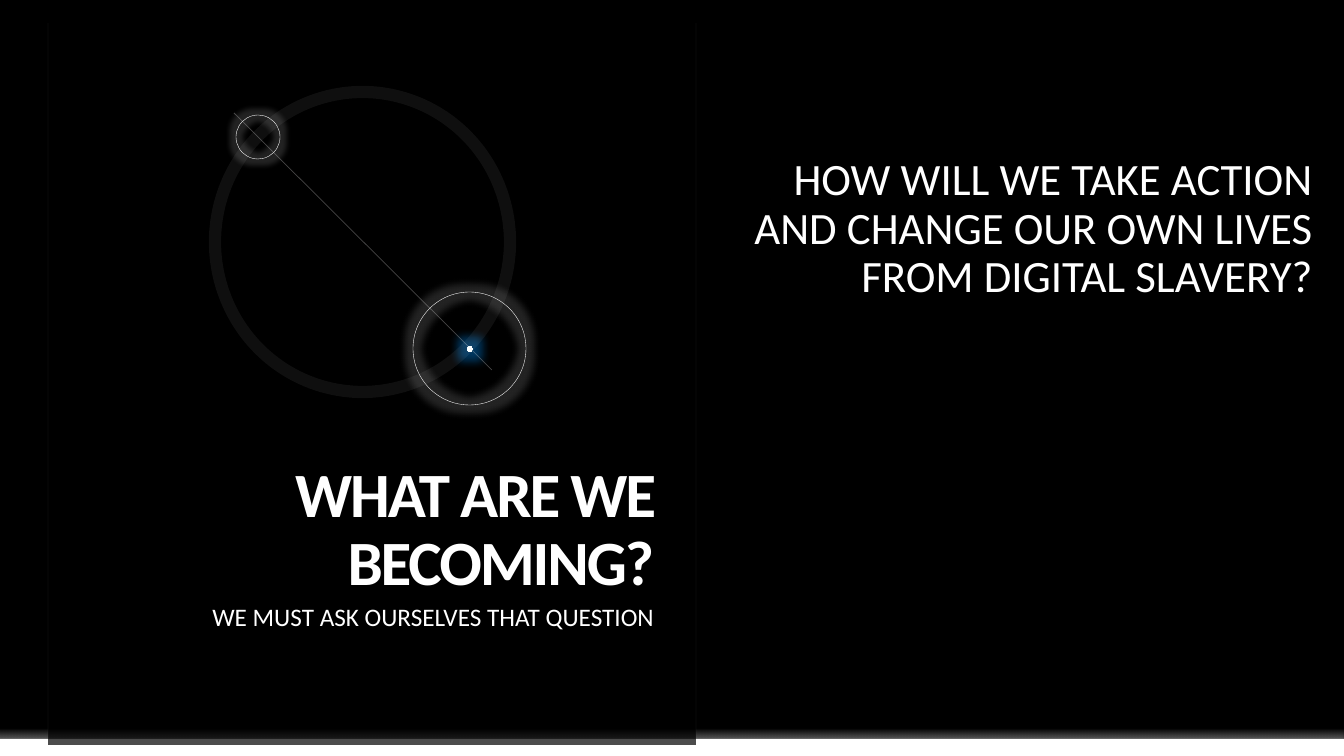
from pptx import Presentation
from pptx.dml.color import RGBColor
from pptx.enum.shapes import MSO_CONNECTOR, MSO_SHAPE
from pptx.enum.text import MSO_ANCHOR, MSO_AUTO_SIZE, PP_ALIGN
from pptx.oxml import parse_xml
from pptx.oxml.ns import nsdecls, qn
from pptx.util import Emu, Pt

RECT, OVAL = MSO_SHAPE.RECTANGLE, MSO_SHAPE.OVAL
TOP, BOTTOM = MSO_ANCHOR.TOP, MSO_ANCHOR.BOTTOM
WHITE, BLACK, GLOW_BLUE = "FFFFFF", "000000", "0070C0"

# Content; boxes are left, top, width, height in px
TITLE = "WHAT ARE WE BECOMING?"
SUBTITLE = "WE MUST ASK OURSELVES THAT QUESTION"
QUESTION = "HOW WILL WE TAKE ACTION AND CHANGE OUR OWN LIVES FROM DIGITAL SLAVERY?"
TITLE_BOX = (84, 430, 570, 169)
SUBTITLE_BOX = (84, 605, 570, 77)
QUESTION_BOX = (743, 157, 570, 77)

FLOOR_BOX = (0, 739, 1344, 17)
FADE_BOX = (0, 722, 1344, 17)
FADE_STOPS = [(40, WHITE, 0), (100, WHITE, 35)]
PANELS = [((48, 429, 648, 316), 70), ((48, 23, 648, 407), 94)]
PANEL_EDGES = [696, 48]
EDGE_TOP, EDGE_BOTTOM = 23, 739

SMALL_CIRCLE = (236, 115, 44, 44)
BIG_CIRCLE = (413, 292, 113, 113)
DOT = (467, 346, 6, 6)
DOT_STOPS = [(0, WHITE, 100), (65, "F7FFFF", 100), (70, "C1E4FF", 100)]
ORBIT = (215, 92, 295, 300)
AXIS = (234, 113, 492, 370)


def px(n):
    return Emu(round(n * 914400 / 100.8))


def rgb(c):
    return RGBColor.from_string(c)


def set_alpha(fill_owner, percent):
    clr = next(fill_owner.iter(qn("a:srgbClr")))
    clr.append(parse_xml(f'<a:alpha {nsdecls("a")} val="{percent * 1000}"/>'))


def set_line(line, color, width, alpha):
    line.color.rgb = rgb(color)
    line.width = Pt(width)
    set_alpha(line._get_or_add_ln(), alpha)


def add_shape(kind, box, fill=None, alpha=100, line=None):
    """Add a preset shape; line is (colour, points, opacity percent)."""
    s = slide.shapes.add_shape(kind, *map(px, box))
    s.shadow.inherit = False
    if fill:
        s.fill.solid()
        s.fill.fore_color.rgb = rgb(fill)
        set_alpha(s._element.spPr, alpha)
    else:
        s.fill.background()
    if line:
        set_line(s.line, *line)
    else:
        s.line.fill.background()
    return s


def add_line(x1, y1, x2, y2, *line):
    c = slide.shapes.add_connector(MSO_CONNECTOR.STRAIGHT, *map(px, (x1, y1, x2, y2)))
    set_line(c.line, *line)
    c._element.spPr.append(parse_xml(f'<a:effectLst {nsdecls("a")}/>'))


def set_gradient(s, stops, direction):
    gs = "".join(
        f'<a:gs pos="{pos * 1000}"><a:srgbClr val="{c}"><a:alpha val="{a * 1000}"/></a:srgbClr></a:gs>'
        for pos, c, a in stops)
    sp_pr = s._element.spPr
    sp_pr.replace(sp_pr.find(qn("a:noFill")), parse_xml(
        f'<a:gradFill {nsdecls("a")}><a:gsLst>{gs}</a:gsLst>{direction}</a:gradFill>'))


def add_glow(s, radius, color, alpha):
    s._element.spPr.find(qn("a:effectLst")).append(parse_xml(
        f'<a:glow {nsdecls("a")} rad="{Pt(radius)}"><a:srgbClr val="{color}">'
        f'<a:alpha val="{alpha * 1000}"/></a:srgbClr></a:glow>'))


def set_text(s, box, text, size, bold=False, anchor=TOP, spacing=None):
    s.left, s.top, s.width, s.height = map(px, box)
    tf = s.text_frame
    tf.word_wrap = True
    tf.auto_size = MSO_AUTO_SIZE.NONE
    tf.vertical_anchor = anchor
    tf.margin_left = tf.margin_top = tf.margin_right = tf.margin_bottom = 0
    p = tf.paragraphs[0]
    p.alignment = PP_ALIGN.RIGHT
    p.line_spacing = 0.9
    p.space_before = Pt(0)
    r = p.add_run()
    r.text = text
    r.font.name = "Calibri"
    r.font.size = Pt(size)
    r.font.bold = bold
    r.font.color.rgb = rgb(WHITE)
    if spacing:
        r.font._element.set("spc", str(round(spacing * 100)))


prs = Presentation()
prs.slide_width, prs.slide_height = px(1344), px(756)
slide = prs.slides.add_slide(prs.slide_layouts[0])
slide.background.fill.solid()
slide.background.fill.fore_color.rgb = rgb(BLACK)
title, subtitle = slide.placeholders

# Floor and left panel
add_shape(RECT, FLOOR_BOX, WHITE)
fade = add_shape(RECT, FADE_BOX)
set_gradient(fade, FADE_STOPS, '<a:lin ang="5400000" scaled="0"/>')
for box, alpha in PANELS:
    add_shape(RECT, box, BLACK, alpha)
for x in PANEL_EDGES:
    add_line(x, EDGE_TOP, x, EDGE_BOTTOM, "F2F2F2", 0.25, 15)

# Title and subtitle, brought in front of the panel
set_text(title, TITLE_BOX, TITLE, 45, bold=True, anchor=BOTTOM, spacing=-1.5)
set_text(subtitle, SUBTITLE_BOX, SUBTITLE, 18)
for s in (title, subtitle):
    slide.shapes._spTree.append(s._element)

# Orbit with two glowing circles
for box, radius in ((SMALL_CIRCLE, 8), (BIG_CIRCLE, 11)):
    add_glow(add_shape(OVAL, box, line=(WHITE, 0.25, 100)), radius, WHITE, 14)
dot = add_shape(OVAL, DOT)
set_gradient(dot, DOT_STOPS, '<a:path path="circle"><a:fillToRect l="50000" t="50000" '
             'r="50000" b="50000"/></a:path>')
add_glow(dot, 13, GLOW_BLUE, 50)
add_shape(OVAL, ORBIT, line=(WHITE, 8.75, 6))
add_line(*AXIS, "E7E6E6", 0.5, 30)

question = slide.shapes.add_textbox(*map(px, QUESTION_BOX))
set_text(question, QUESTION_BOX, QUESTION, 32)

prs.save("out.pptx")
